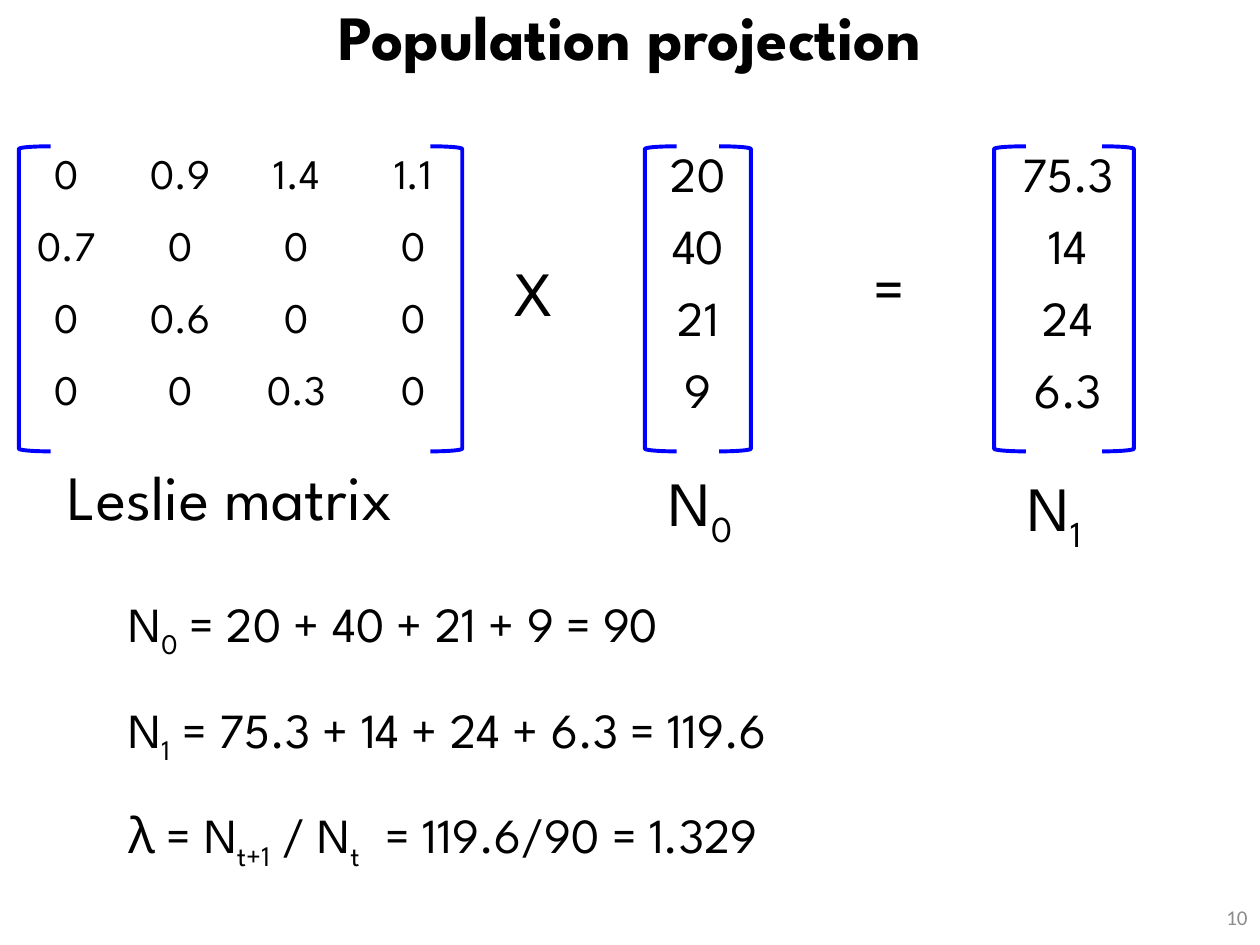
from dataclasses import dataclass

from pptx import Presentation
from pptx.dml.color import RGBColor
from pptx.enum.shapes import MSO_SHAPE
from pptx.enum.text import MSO_ANCHOR, MSO_AUTO_SIZE, PP_ALIGN
from pptx.util import Cm, Pt


@dataclass(frozen=True)
class Theme:
    font: str = "League Spartan"
    number_font: str = "Calibri"
    ink: RGBColor = RGBColor(0, 0, 0)
    muted: RGBColor = RGBColor(0x8C, 0x8C, 0x8C)
    bracket: RGBColor = RGBColor(0, 0, 0xFF)
    large: int = 36
    medium: int = 28
    small: int = 24
    tiny: int = 12


THEME = Theme()
NO_TABLE_STYLE = "{2D5ABB26-0587-4C30-8999-92F81FD0307C}"
BRACKET_WIDTH = 0.64


def add_run(paragraph, text, size, color=THEME.ink, font=THEME.font, bold=False, subscript=False):
    run = paragraph.add_run()
    run.text = text
    run.font.size, run.font.name, run.font.bold = Pt(size), font, bold
    run.font.color.rgb = color
    if subscript:
        run.font._element.set("baseline", "-25000")


def add_frame(slide, box):
    return slide.shapes.add_textbox(*map(Cm, box)).text_frame


def add_formula(slide, box, parts, size):
    """Alternate normal and subscript parts, starting with a normal one."""
    frame = add_frame(slide, box)
    frame.word_wrap = False
    frame.auto_size = MSO_AUTO_SIZE.SHAPE_TO_FIT_TEXT
    for index, part in enumerate(parts):
        add_run(frame.paragraphs[0], part, size, subscript=index % 2 == 1)


def add_title(slide, box, text):
    frame = add_frame(slide, box)
    frame.word_wrap = True
    frame.vertical_anchor = MSO_ANCHOR.MIDDLE
    paragraph = frame.paragraphs[0]
    paragraph.alignment, paragraph.line_spacing = PP_ALIGN.CENTER, 0.9
    add_run(paragraph, text, THEME.large, bold=True)


def add_page_number(slide, box, text):
    frame = add_frame(slide, box)
    frame.word_wrap = True
    frame.vertical_anchor = MSO_ANCHOR.MIDDLE
    frame.paragraphs[0].alignment = PP_ALIGN.RIGHT
    add_run(frame.paragraphs[0], text, THEME.tiny, THEME.muted, THEME.number_font)


def add_brackets(slide, box):
    left, top, width, height = box
    for x, flipped in ((left, False), (left + width - BRACKET_WIDTH, True)):
        bracket = slide.shapes.add_shape(
            MSO_SHAPE.LEFT_BRACKET, Cm(x), Cm(top), Cm(BRACKET_WIDTH), Cm(height))
        bracket.shadow.inherit = False
        bracket.fill.background()
        bracket.line.color.rgb = THEME.bracket
        bracket.line.width = Pt(2.25)
        if flipped:
            bracket._element.spPr.xfrm.set("flipH", "1")


def add_matrix(slide, box, rows, column_widths, offset, size):
    """Brackets fill the box; the values start at the offset from its corner."""
    left, top, _, _ = box
    row_height = 1.45
    add_brackets(slide, box)
    table = slide.shapes.add_table(
        len(rows), len(column_widths), Cm(left + offset[0]), Cm(top + offset[1]),
        Cm(sum(column_widths)), Cm(row_height * len(rows))).table
    table.first_row = table.horz_banding = False
    table._tbl.tblPr.find("{*}tableStyleId").text = NO_TABLE_STYLE
    for column, width in zip(table.columns, column_widths):
        column.width = Cm(width)
    for r, values in enumerate(rows):
        table.rows[r].height = Cm(row_height)
        for c, value in enumerate(values):
            cell = table.cell(r, c)
            cell.fill.background()
            paragraph = cell.text_frame.paragraphs[0]
            paragraph.alignment = PP_ALIGN.CENTER
            add_run(paragraph, value, size)


def add_projection(slide, box):
    """Leslie matrix times the first population vector gives the next one."""
    left, top, _, height = box
    leslie = [
        ["0", "0.9", "1.4", "1.1"],
        ["0.7", "0", "0", "0"],
        ["0", "0.6", "0", "0"],
        ["0", "0", "0.3", "0"],
    ]
    start = [["20"], ["40"], ["21"], ["9"]]
    following = [["75.3"], ["14"], ["24"], ["6.3"]]
    matrices = [
        (0, 8.94, leslie, [2.29, 2.29, 2.41, 2.29], (-0.18, 0.15), THEME.small),
        (12.62, 2.14, start, [2.39], (-0.12, 0.12), THEME.medium),
        (19.66, 2.82, following, [2.97], (0, 0.12), THEME.medium),
    ]
    for x, width, rows, column_widths, offset, size in matrices:
        add_matrix(slide, (left + x, top, width, height), rows, column_widths, offset, size)

    labels = [
        (9.75, 2.03, 1.3, ["X"]),
        (16.97, 1.93, 1.3, ["="]),
        (0.74, 6.14, 8.41, ["Leslie matrix"]),
        (12.85, 6.27, 2.01, ["N", "0"]),
        (20.09, 6.37, 2.01, ["N", "1"]),
    ]
    for x, y, width, parts in labels:
        add_formula(slide, (left + x, top + y, width, 1.8), parts, THEME.large)


def add_growth_rate(slide, box):
    left, top, width, height = box
    formulas = [
        (12.65, ["N", "0", " = 20 + 40 + 21 + 9 = 90"]),
        (15.72, ["N", "1", " = 75.3 + 14 + 24 + 6.3 = 119.6"]),
        (15.01, ["λ = N", "t+1", " / N", "t  ", " = 119.6/90 = 1.329"]),
    ]
    line_height = 1.45
    step = (height - line_height) / (len(formulas) - 1)
    for index, (line_width, parts) in enumerate(formulas):
        line_box = (left, top + index * step, min(line_width, width), line_height)
        add_formula(slide, line_box, parts, THEME.medium)


def main():
    presentation = Presentation()
    presentation.slide_width, presentation.slide_height = Cm(25.4), Cm(19.05)
    slide = presentation.slides.add_slide(presentation.slide_layouts[6])
    add_title(slide, (0, 0.03, 25.4, 1.57), "Population projection")
    add_projection(slide, (0.38, 2.95, 22.48, 6.15))
    add_growth_rate(slide, (2.34, 11.84, 15.72, 5.71))
    add_page_number(slide, (19.69, 17.98, 5.71, 1.02), "10")
    presentation.save("out.pptx")


if __name__ == "__main__":
    main()
